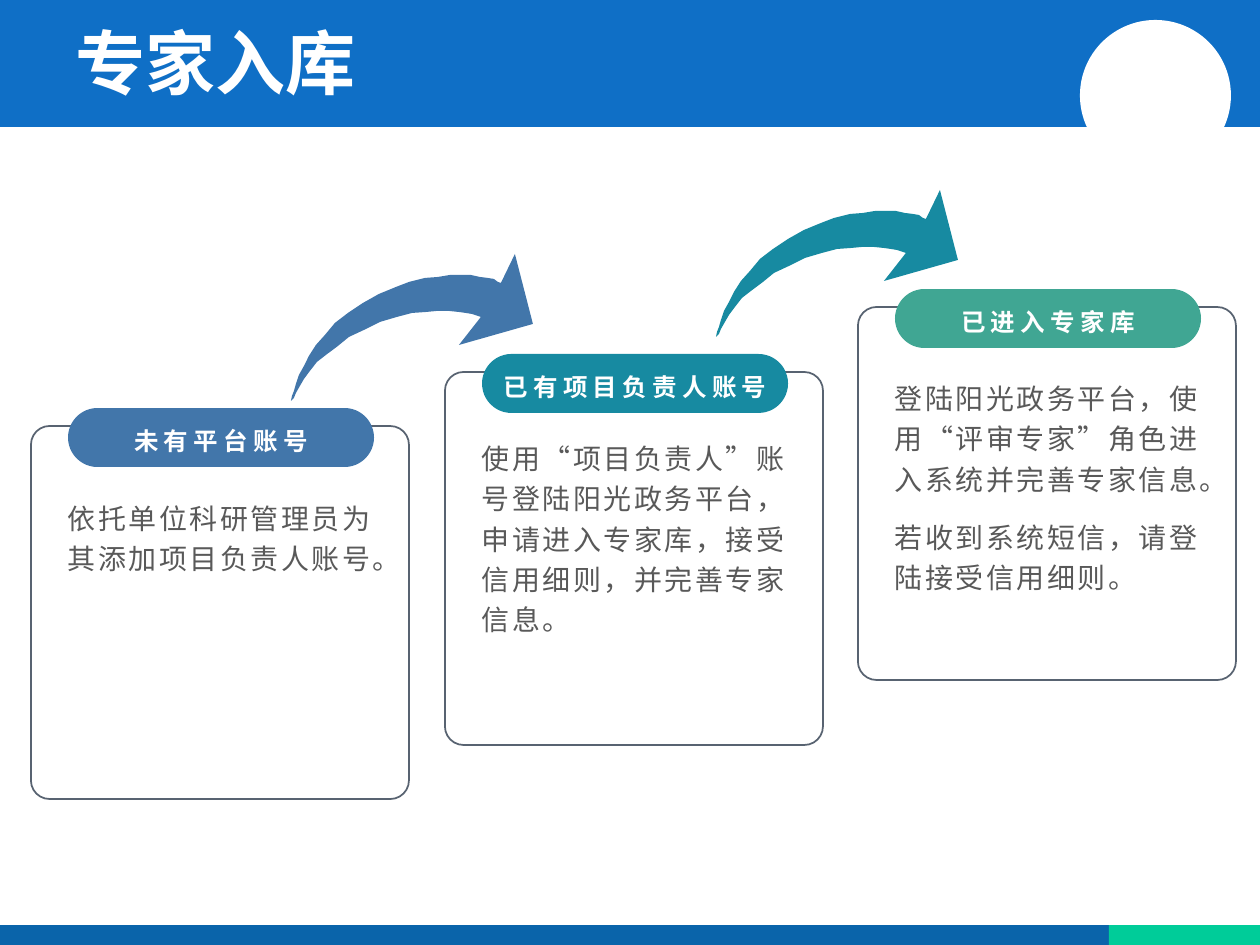
from lxml import etree
from pptx import Presentation
from pptx import util as u
from pptx.dml.color import RGBColor
from pptx.enum import lang, shapes, text
from pptx.oxml import ns

SCALE = u.Inches(1) / 126
FONT = "Noto Sans CJK SC"
WHITE = RGBColor(0xFF, 0xFF, 0xFF)
HEADER_BLUE = RGBColor(0x0F, 0x6F, 0xC6)
FOOTER_BLUE = RGBColor(0x0A, 0x64, 0xAA)
FOOTER_GREEN = RGBColor(0x00, 0xCC, 0x99)
STEEL = RGBColor(0x42, 0x76, 0xAA)
TEAL = RGBColor(0x17, 0x8A, 0xA1)
GREEN = RGBColor(0x40, 0xA6, 0x93)
OUTLINE = RGBColor(0x58, 0x63, 0x71)
BODY_GRAY = RGBColor(0x59, 0x59, 0x59)

CARD_WIDTH, CARD_HEIGHT = 378, 373
PILL_WIDTH, PILL_HEIGHT = 306, 59

CARDS = [
    (31, 426, 69, STEEL, "未有平台账号",
     "依托单位科研管理员为其添加项目负责人账号。"),
    (445, 372, 63, TEAL, "已有项目负责人账号",
     "使用“项目负责人”账号登陆阳光政务平台，申请进入专家库，接受信用细则，并完善专家信息。"),
    (858, 307, 68, GREEN, "已进入专家库",
     "登陆阳光政务平台，使用“评审专家”角色进入系统并完善专家信息。\n若收到系统短信，请登陆接受信用细则。"),
]
ARROWS = [(291, 254, STEEL), (716, 190, TEAL)]

ARROW_LOWER_EDGE = [
    (0, 147), (3, 144), (5, 139), (9, 132), (13, 125), (19, 117), (26, 108),
    (35, 101), (47, 92), (58, 83), (73, 76), (89, 68), (106, 63), (121, 59),
    (135, 58), (146, 57), (158, 57), (168, 58), (175, 59), (181, 60), (190, 63),
]
ARROW_HEAD = [(168, 91), (242, 70), (224, 0), (210, 29)]
ARROW_UPPER_EDGE = [
    (207, 28), (203, 25), (197, 24), (189, 23), (180, 21), (170, 21), (159, 21),
    (147, 23), (134, 24), (118, 28), (105, 33), (88, 40), (72, 49), (57, 59),
    (44, 69), (34, 81), (25, 91), (18, 102), (13, 112), (8, 121), (5, 130),
    (3, 137), (1, 142),
]


def px(value):
    return u.Emu(round(value * SCALE))


def add_block(slide, kind, box, fill=None, line=None):
    shape = slide.shapes.add_shape(kind, *map(px, box))
    shape.shadow.inherit = False
    if fill is None:
        shape.fill.background()
    else:
        shape.fill.solid()
        shape.fill.fore_color.rgb = fill
    if line is None:
        shape.line.fill.background()
    else:
        shape.line.color.rgb = line
        shape.line.width = u.Pt(1)
    return shape


def format_run(run, size, color, bold=False, spacing=0):
    font = run.font
    font.size = u.Pt(size)
    font.bold = bold
    font.color.rgb = color
    font.name = FONT
    font.language_id = lang.MSO_LANGUAGE_ID.SIMPLIFIED_CHINESE
    properties = run._r.get_or_add_rPr()
    etree.SubElement(properties, ns.qn("a:ea")).set("typeface", FONT)
    if spacing:
        properties.set("spc", str(spacing))


def add_text(slide, box, content, size, color, bold, spacing, align, after=0):
    frame = slide.shapes.add_textbox(*map(px, box)).text_frame
    frame.word_wrap = True
    frame.text = content
    for paragraph in frame.paragraphs:
        paragraph.alignment = align
        paragraph.line_spacing = 1.2
        paragraph.space_after = u.Pt(after)
        paragraph._p.get_or_add_pPr().set("hangingPunct", "1")
        for run in paragraph.runs:
            format_run(run, size, color, bold, spacing)
    return frame


def add_backdrop(slide, width, height):
    rectangle = shapes.MSO_SHAPE.RECTANGLE
    add_block(slide, rectangle, (0, 0, width, 127), HEADER_BLUE)
    add_block(slide, rectangle, (0, height - 20, width, 20), FOOTER_BLUE)
    add_block(slide, rectangle, (width - 151, height - 20, 151, 20), FOOTER_GREEN)
    add_block(slide, shapes.MSO_SHAPE.OVAL, (width - 180, 20, 151, 151), WHITE)


def place_title(slide, left, top, width, height):
    title = slide.shapes.title
    title.left, title.top, title.width, title.height = map(px, (left, top, width, height))
    slide.shapes._spTree.append(title._element)
    frame = title.text_frame
    frame.text = "专家入库"
    frame.auto_size = text.MSO_AUTO_SIZE.NONE
    frame.vertical_anchor = text.MSO_ANCHOR.MIDDLE
    frame.paragraphs[0].alignment = text.PP_ALIGN.LEFT
    format_run(frame.paragraphs[0].runs[0], 40, WHITE, bold=True)


def add_arrow(slide, left, top, color):
    start, *rest = ARROW_LOWER_EDGE + ARROW_HEAD + ARROW_UPPER_EDGE
    builder = slide.shapes.build_freeform(*start, scale=SCALE)
    builder.add_line_segments(rest, close=True)
    arrow = builder.convert_to_shape(px(left), px(top))
    arrow.shadow.inherit = False
    arrow.fill.solid()
    arrow.fill.fore_color.rgb = color
    arrow.line.fill.background()


def add_card(slide, left, top, body_offset, color, label, body):
    rounded = shapes.MSO_SHAPE.ROUNDED_RECTANGLE
    frame = add_block(slide, rounded, (left, top, CARD_WIDTH, CARD_HEIGHT), line=OUTLINE)
    frame.adjustments[0] = 0.05
    pill_left, pill_top = left + 37, top - 18
    pill = add_block(slide, rounded, (pill_left, pill_top, PILL_WIDTH, PILL_HEIGHT), color)
    pill.adjustments[0] = 0.5

    body_frame = add_text(slide, (left + 28, top + body_offset, 325, 280), body,
                          16, BODY_GRAY, False, 150, text.PP_ALIGN.LEFT, after=10)
    body_frame.margin_left = body_frame.margin_right = px(9)
    body_frame.margin_top = 0
    body_frame.margin_bottom = px(5)

    label_frame = add_text(slide, (pill_left, pill_top + 5, PILL_WIDTH, 50), label,
                           14, WHITE, True, 300, text.PP_ALIGN.CENTER)
    label_frame.vertical_anchor = text.MSO_ANCHOR.MIDDLE


def main():
    presentation = Presentation()
    presentation.slide_width, presentation.slide_height = px(1260), px(945)
    slide = presentation.slides.add_slide(presentation.slide_layouts[5])
    add_backdrop(slide, 1260, 945)
    place_title(slide, 63, -6, 1134, 136)
    for arrow in ARROWS:
        add_arrow(slide, *arrow)
    for card in CARDS:
        add_card(slide, *card)
    presentation.save("out.pptx")


if __name__ == "__main__":
    main()
